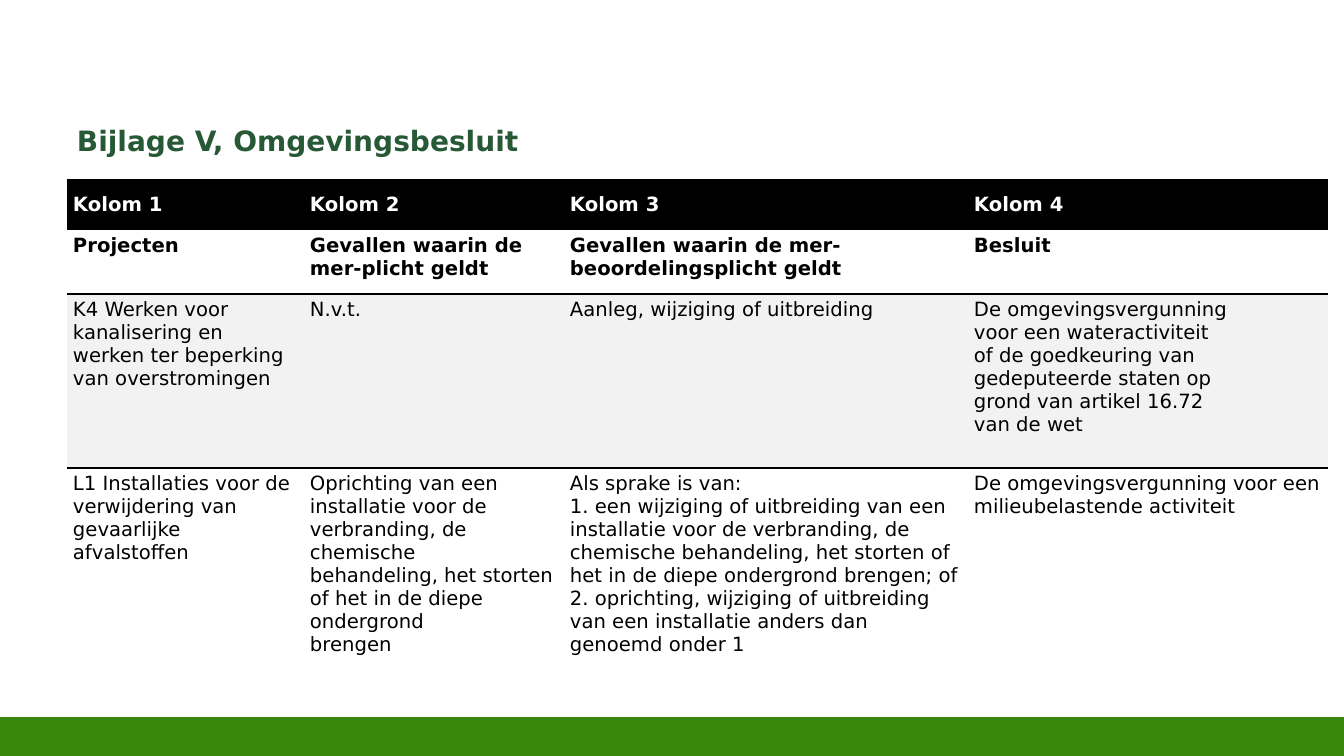
from lxml import etree
from pptx import Presentation
from pptx import util as u
from pptx.dml.color import RGBColor
from pptx.enum import shapes, text
from pptx.oxml import ns

PX = 9144000 / 1008  # EMU per px, 100.8 px to the inch
FONT = "DejaVu Sans"
COLORS = {
    "bar": "39870C",
    "title": "275937",
    "black": "000000",
    "white": "FFFFFF",
    "band": "F2F2F2",
}
NO_STYLE = "{2D5ABB26-0587-4C30-8999-92F81FD0307C}"

COLUMN_WIDTHS = [237, 260, 404, 360]
ROW_HEIGHTS = [51, 64, 174, 229]
# Each line break starts a new paragraph
ROWS = [
    ["Kolom 1", "Kolom 2", "Kolom 3", "Kolom 4"],
    [
        "Projecten",
        "Gevallen waarin de mer-plicht geldt",
        "Gevallen waarin de mer-beoordelingsplicht geldt",
        "Besluit",
    ],
    [
        "K4 Werken voor\nkanalisering en\nwerken ter beperking\nvan overstromingen",
        "N.v.t.",
        "Aanleg, wijziging of uitbreiding",
        "De omgevingsvergunning\nvoor een wateractiviteit\nof de goedkeuring van\n"
        "gedeputeerde staten op\ngrond van artikel 16.72\nvan de wet",
    ],
    [
        "L1 Installaties voor de\nverwijdering van\ngevaarlijke\nafvalstoffen",
        "Oprichting van een\ninstallatie voor de\nverbranding, de chemische\n"
        "behandeling, het storten of het in de diepe ondergrond\nbrengen",
        "Als sprake is van:\n1. een wijziging of uitbreiding van een\n"
        "installatie voor de verbranding, de\n"
        "chemische behandeling, het storten of het in de diepe ondergrond brengen; of\n"
        "2. oprichting, wijziging of uitbreiding van een installatie anders dan genoemd onder 1",
        "De omgevingsvergunning voor een\nmilieubelastende activiteit",
    ],
]
# Fill, text colour and bold for each row
ROW_LOOKS = [
    ("black", "white", True),
    (None, "black", True),
    ("band", "black", False),
    (None, "black", False),
]


def px(length):
    return u.Emu(round(length * PX))


def rgb(name):
    return RGBColor.from_string(COLORS[name])


def format_text(frame, size, color, bold):
    for paragraph in frame.paragraphs:
        for run in paragraph.runs:
            run.font.name = FONT
            run.font.size = u.Pt(size)
            run.font.bold = bold
            run.font.color.rgb = rgb(color)


def add_footer_bar(slide, box):
    bar = slide.shapes.add_shape(shapes.MSO_SHAPE.RECTANGLE, *map(px, box))
    bar.shadow.inherit = False
    bar.fill.solid()
    bar.fill.fore_color.rgb = rgb("bar")
    bar.line.color.rgb = rgb("bar")
    bar.line.width = u.Pt(2)


def add_title(slide, box):
    title = slide.shapes.add_textbox(*map(px, box)).text_frame
    title.word_wrap = True
    title.vertical_anchor = text.MSO_ANCHOR.BOTTOM
    title.text = "Bijlage V, Omgevingsbesluit"
    format_text(title, 20, "title", True)


def add_rule(cell, side):
    """Draw a thin black border; border elements come before the fill."""
    properties = cell._tc.get_or_add_tcPr()
    line = etree.Element(ns.qn(f"a:{side}"), w=str(u.Pt(1)))
    fill = etree.SubElement(line, ns.qn("a:solidFill"))
    etree.SubElement(fill, ns.qn("a:srgbClr"), val=COLORS["black"])
    properties.insert(0, line)


def fill_cell(cell, content, look, is_header):
    fill, color, bold = look
    cell.text_frame.text = content
    format_text(cell.text_frame, 14, color, bold)
    cell.margin_left, cell.margin_right = px(6), px(4)
    cell.margin_top, cell.margin_bottom = px(9 if is_header else 4), px(9)
    cell.vertical_anchor = text.MSO_ANCHOR.MIDDLE if is_header else text.MSO_ANCHOR.TOP
    if fill:
        cell.fill.solid()
        cell.fill.fore_color.rgb = rgb(fill)
    else:
        cell.fill.background()


def add_projects_table(slide, left, top):
    box = (left, top, sum(COLUMN_WIDTHS), sum(ROW_HEIGHTS))
    table = slide.shapes.add_table(len(ROWS), len(COLUMN_WIDTHS), *map(px, box)).table
    table.horz_banding = False
    table._tbl.tblPr.find(ns.qn("a:tableStyleId")).text = NO_STYLE
    for column, width in zip(table.columns, COLUMN_WIDTHS):
        column.width = px(width)
    for row, height in zip(table.rows, ROW_HEIGHTS):
        row.height = px(height)
    for r, (contents, look) in enumerate(zip(ROWS, ROW_LOOKS)):
        for c, content in enumerate(contents):
            fill_cell(table.cell(r, c), content, look, r == 0)
    # Rule between the column headings and the projects
    for c in range(len(COLUMN_WIDTHS)):
        add_rule(table.cell(1, c), "lnB")
        add_rule(table.cell(2, c), "lnT")


def main():
    deck = Presentation()
    deck.slide_width, deck.slide_height = px(1344), px(756)
    slide = deck.slides.add_slide(deck.slide_layouts[6])
    add_footer_bar(slide, (0, 718, 1344, 39))
    add_title(slide, (67, 105, 917, 57))
    add_projects_table(slide, 67, 179)
    deck.save("out.pptx")


if __name__ == "__main__":
    main()
